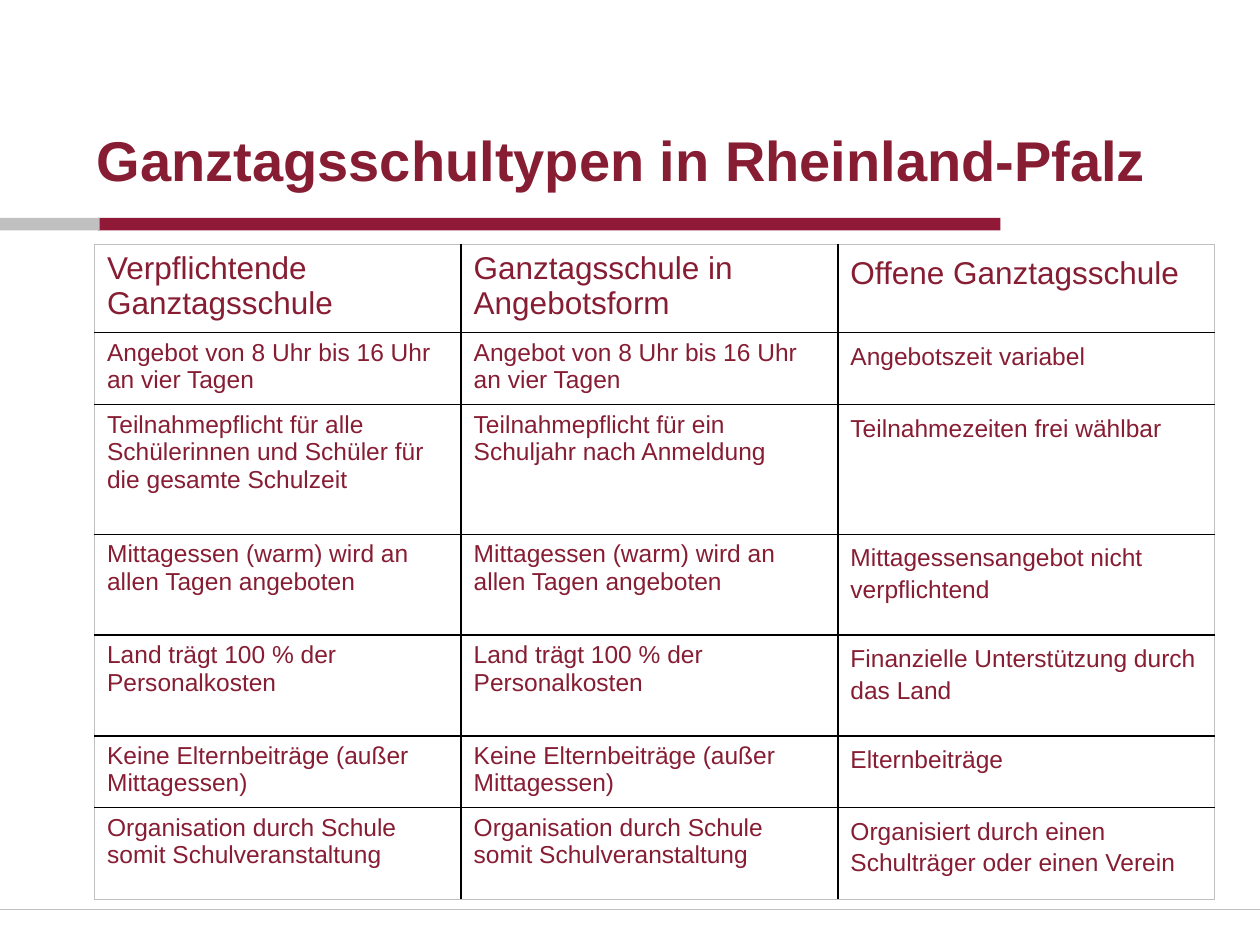
from dataclasses import dataclass

from lxml import etree
from pptx import Presentation
from pptx.dml.color import RGBColor
from pptx.enum.shapes import MSO_CONNECTOR, MSO_SHAPE
from pptx.enum.text import MSO_ANCHOR
from pptx.oxml.ns import qn
from pptx.util import Inches, Pt

RECT = MSO_SHAPE.RECTANGLE
STRAIGHT = MSO_CONNECTOR.STRAIGHT
TOP = MSO_ANCHOR.TOP
BLANK_LAYOUT = 6


@dataclass(frozen=True)
class Theme:
    font: str = "Arial"
    text: str = "871D33"
    accent: str = "8F1936"
    grey: str = "C0C0C0"
    grid: str = "000000"
    paper: str = "FFFFFF"
    title_size: int = 32
    header_size: int = 18
    body_size: int = 14


class SlideBuilder:
    def __init__(self, slide, theme):
        self.s = slide
        self.theme = theme

    def bar(self, x, y, w, h, color):
        sp = self.s.shapes.add_shape(RECT, Inches(x), Inches(y), Inches(w), Inches(h))
        sp.shadow.inherit = False
        sp.fill.solid()
        sp.fill.fore_color.rgb = RGBColor.from_string(color)
        sp.line.fill.background()

    def rule(self, x1, y1, x2, y2, color, width):
        line = self.s.shapes.add_connector(
            STRAIGHT, Inches(x1), Inches(y1), Inches(x2), Inches(y2))
        line.line.color.rgb = RGBColor.from_string(color)
        line.line.width = Pt(width)
        etree.SubElement(line._element.spPr, qn("a:effectLst"))

    def run(self, p, text, size, bold=False):
        r = p.add_run()
        r.text = text
        r.font.name = self.theme.font
        r.font.size = Pt(size)
        r.font.bold = bold
        r.font.color.rgb = RGBColor.from_string(self.theme.text)

    def text(self, x, y, w, h, text, size, bold=False):
        box = self.s.shapes.add_textbox(Inches(x), Inches(y), Inches(w), Inches(h))
        tf = box.text_frame
        tf.word_wrap = True
        tf.vertical_anchor = TOP
        self.run(tf.paragraphs[0], text, size, bold)

    def borders(self, cell, colors, width=1):
        tc_pr = cell._tc.get_or_add_tcPr()
        for i, (side, color) in enumerate(colors.items()):
            ln = etree.Element(qn(f"a:{side}"), w=str(Pt(width)))
            fill = etree.SubElement(ln, qn("a:solidFill"))
            etree.SubElement(fill, qn("a:srgbClr"), val=color)
            tc_pr.insert(i, ln)

    def table(self, x, y, widths, heights, rows):
        th = self.theme
        frame = self.s.shapes.add_table(
            len(rows), len(widths), Inches(x), Inches(y),
            Inches(sum(widths)), Inches(sum(heights)))
        table = frame.table
        for column, width in zip(table.columns, widths):
            column.width = Inches(width)
        for row, height in zip(table.rows, heights):
            row.height = Inches(height)

        last_row, last_col = len(rows) - 1, len(widths) - 1
        for i, texts in enumerate(rows):
            for j, text in enumerate(texts):
                cell = table.cell(i, j)
                cell.fill.solid()
                cell.fill.fore_color.rgb = RGBColor.from_string(th.paper)
                cell.vertical_anchor = TOP
                p = cell.text_frame.paragraphs[0]
                if j == last_col:
                    p.line_spacing = 1.15
                self.run(p, text, th.body_size if i else th.header_size)
                # Grey outer frame, black inner grid
                self.borders(cell, {
                    "lnL": th.grid if j else th.grey,
                    "lnR": th.grid if j < last_col else th.grey,
                    "lnT": th.grid if i else th.grey,
                    "lnB": th.grid if i < last_row else th.grey,
                })


ROWS = [
    ("Verpflichtende Ganztagsschule",
     "Ganztagsschule in Angebotsform",
     "Offene Ganztagsschule"),
    ("Angebot von 8 Uhr bis 16 Uhr an vier Tagen",
     "Angebot von 8 Uhr bis 16 Uhr an vier Tagen",
     "Angebotszeit variabel"),
    ("Teilnahmepflicht für alle Schülerinnen und Schüler für die gesamte Schulzeit",
     "Teilnahmepflicht für ein Schuljahr nach Anmeldung",
     "Teilnahmezeiten frei wählbar"),
    ("Mittagessen (warm) wird an allen Tagen angeboten",
     "Mittagessen (warm) wird an allen Tagen angeboten",
     "Mittagessensangebot nicht verpflichtend"),
    ("Land trägt 100 % der Personalkosten",
     "Land trägt 100 % der Personalkosten",
     "Finanzielle Unterstützung durch das Land"),
    ("Keine Elternbeiträge (außer Mittagessen)",
     "Keine Elternbeiträge (außer Mittagessen)",
     "Elternbeiträge"),
    ("Organisation durch Schule somit Schulveranstaltung",
     "Organisation durch Schule somit Schulveranstaltung",
     "Organisiert durch einen Schulträger oder einen Verein"),
]


def main():
    prs = Presentation()
    prs.slide_width, prs.slide_height = Inches(10), Inches(7.5)
    theme = Theme()
    slide = SlideBuilder(prs.slides.add_slide(prs.slide_layouts[BLANK_LAYOUT]), theme)

    # Bars under the title and footer rule
    slide.bar(0.78, 1.73, 7.16, 0.1, theme.accent)
    slide.bar(0, 1.73, 0.79, 0.1, theme.grey)
    slide.rule(0, 7.22, 10, 7.22, theme.grey, 0.75)

    # Title
    slide.text(0.67, 0.95, 8.98, 0.64, "Ganztagsschultypen in Rheinland-Pfalz",
               theme.title_size, bold=True)

    # Comparison of the school types
    slide.table(0.75, 1.94, [2.91, 2.99, 2.99],
                [0.7, 0.57, 1.03, 0.8, 0.8, 0.57, 0.73], ROWS)

    prs.save("out.pptx")


if __name__ == "__main__":
    main()
